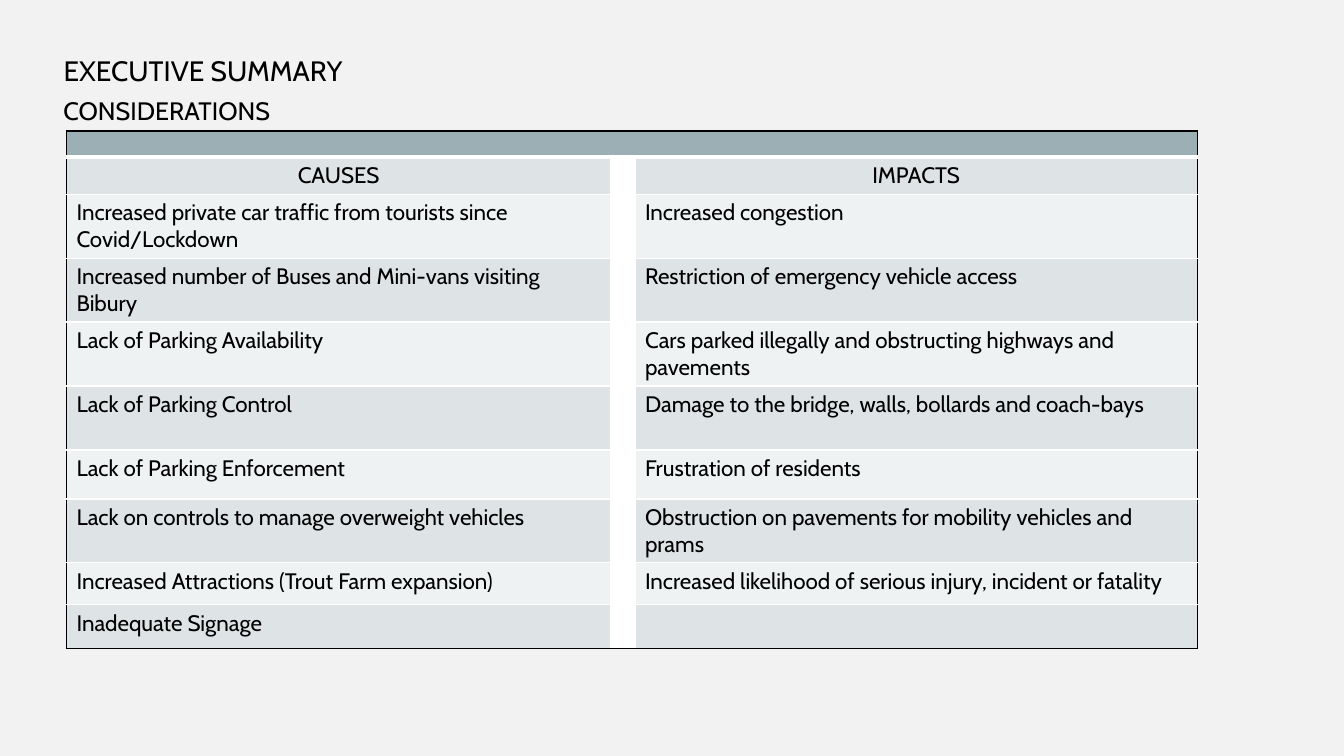
from lxml.etree import SubElement
from pptx import Presentation
from pptx.dml.color import RGBColor
from pptx.enum.text import MSO_ANCHOR, MSO_AUTO_SIZE, PP_ALIGN
from pptx.oxml.ns import qn
from pptx.util import Pt

BLACK = RGBColor(0x00, 0x00, 0x00)
WHITE = RGBColor(0xFF, 0xFF, 0xFF)
BACKGROUND = RGBColor(0xF2, 0xF2, 0xF2)
HEADER = RGBColor(0x9B, 0xAF, 0xB5)
DARK_BAND = RGBColor(0xDE, 0xE3, 0xE5)
LIGHT_BAND = RGBColor(0xEF, 0xF2, 0xF3)

ROWS = [
    ("CAUSES", "IMPACTS"),
    ("Increased private car traffic from tourists since Covid/Lockdown", "Increased congestion"),
    ("Increased number of Buses and Mini-vans visiting Bibury",
     "Restriction of emergency vehicle access"),
    ("Lack of Parking Availability",
     "Cars parked illegally and obstructing highways and pavements"),
    ("Lack of Parking Control", "Damage to the bridge, walls, bollards and coach-bays"),
    ("Lack of Parking Enforcement", "Frustration of residents"),
    ("Lack on controls to manage overweight vehicles",
     "Obstruction on pavements for mobility vehicles and prams"),
    ("Increased Attractions (Trout Farm expansion)",
     "Increased likelihood of serious injury, incident or fatality"),
    ("Inadequate Signage", ""),
]
COL_WIDTHS = [388.8, 16.6, 401.8]
ROW_HEIGHTS = [18.6, 26.5, 45.7, 45.7, 45.7, 45.7, 35, 45, 29.8, 31.3]


def write(tf, text, size=16, align=PP_ALIGN.LEFT, anchor=MSO_ANCHOR.TOP, after=0):
    tf.word_wrap = True
    tf.vertical_anchor = anchor
    p = tf.paragraphs[0]
    p.alignment = align
    p.space_after = Pt(after)
    r = p.add_run()
    r.text = text
    r.font.size = Pt(size)
    r.font.name = "Cabin"
    r.font.color.rgb = BLACK


def set_border(cell, side, color, width):
    ln = SubElement(cell._tc.get_or_add_tcPr(), qn("a:ln" + side), w=str(Pt(width)))
    fill = SubElement(ln, qn("a:solidFill"))
    SubElement(fill, qn("a:srgbClr"), val=str(color))


prs = Presentation()
prs.slide_width, prs.slide_height = Pt(960), Pt(540)
s = prs.slides.add_slide(prs.slide_layouts[5])
s.background.fill.solid()
s.background.fill.fore_color.rgb = BACKGROUND

# Title and subtitle
title = s.shapes.title
title.left, title.top, title.width, title.height = Pt(38.2), Pt(34.6), Pt(441.4), Pt(31.7)
title.text_frame.auto_size = MSO_AUTO_SIZE.NONE
write(title.text_frame, "EXECUTIVE SUMMARY", size=20, after=6)
subtitle = s.shapes.add_textbox(Pt(38.2), Pt(64.8), Pt(862.6), Pt(72.7))
write(subtitle.text_frame, "CONSIDERATIONS", size=18)

# Table grid
frame = s.shapes.add_table(len(ROW_HEIGHTS), len(COL_WIDTHS), Pt(47.5), Pt(93.6),
                           Pt(sum(COL_WIDTHS)), Pt(sum(ROW_HEIGHTS)))
table = frame.table
table.first_row = table.horz_banding = False
for column, width in zip(table.columns, COL_WIDTHS):
    column.width = Pt(width)
for row, height in zip(table.rows, ROW_HEIGHTS):
    row.height = Pt(height)
table.cell(0, 0).merge(table.cell(0, 2))

# Cells: black outer frame, white inner rules, banded rows
last = len(ROWS)
for i in range(last + 1):
    for j in range(3):
        cell = table.cell(i, j)
        set_border(cell, "L", BLACK if j == 0 else WHITE, 1)
        set_border(cell, "R", BLACK if j == 2 or i == 0 else WHITE, 1)
        set_border(cell, "T", BLACK if i == 0 else WHITE, 3 if i == 1 else 1)
        set_border(cell, "B", BLACK if i == last else WHITE, 3 if i == 0 else 1)
        cell.fill.solid()
        if i == 0:
            cell.fill.fore_color.rgb = HEADER
        elif j == 1:
            cell.fill.fore_color.rgb = WHITE
        else:
            cell.fill.fore_color.rgb = DARK_BAND if i % 2 else LIGHT_BAND

        text = ROWS[i - 1][j // 2] if i and j != 1 else ""
        if text:
            heading = i == 1
            write(cell.text_frame, text,
                  align=PP_ALIGN.CENTER if heading else PP_ALIGN.LEFT)
            cell.vertical_anchor = MSO_ANCHOR.MIDDLE if heading else MSO_ANCHOR.TOP
        else:
            # Small type keeps empty cells from stretching their row
            SubElement(cell.text_frame.paragraphs[0]._p, qn("a:endParaRPr"), sz="800")

prs.save("out.pptx")
